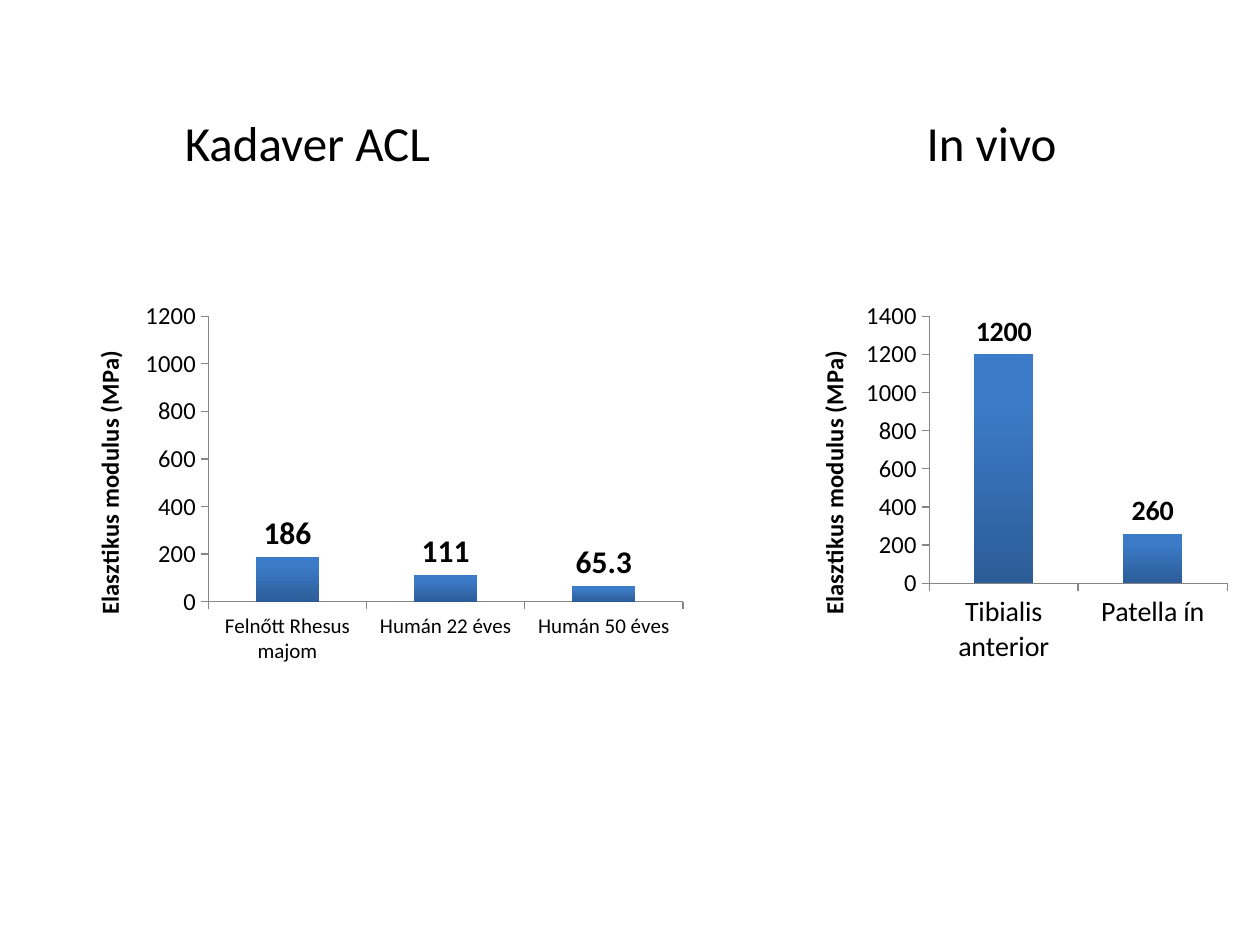
from pptx import Presentation
from pptx.chart.data import CategoryChartData
from pptx.dml.color import RGBColor
from pptx.enum.chart import XL_CHART_TYPE, XL_LABEL_POSITION, XL_TICK_MARK
from pptx.enum.text import MSO_AUTO_SIZE, PP_ALIGN
from pptx.util import Inches, Pt

COLUMN = XL_CHART_TYPE.COLUMN_CLUSTERED
OUT_END = XL_LABEL_POSITION.OUTSIDE_END
OUT, NONE = XL_TICK_MARK.OUTSIDE, XL_TICK_MARK.NONE
CENTER = PP_ALIGN.CENTER
GROW = MSO_AUTO_SIZE.SHAPE_TO_FIT_TEXT

FONT = "Calibri"
COLORS = {"text": "000000", "axis": "868686", "low": "2C5D98", "high": "3C7BC7"}


def color(name):
    return RGBColor.from_string(COLORS[name])


def style(font, size, bold=False):
    font.name = FONT
    font.size = Pt(size)
    font.bold = bold
    font.color.rgb = color("text")


def put_text(frame, text, size, bold=False, align=None):
    para = frame.paragraphs[0]
    para.alignment = align
    run = para.add_run()
    run.text = text
    style(run.font, size, bold)


def add_head(slide, box, text):
    shape = slide.shapes.add_textbox(*map(Inches, box))
    frame = shape.text_frame
    frame.word_wrap = True
    frame.auto_size = GROW
    put_text(frame, text, size=28, align=CENTER)


def style_axis(axis, size):
    axis.has_major_gridlines = False
    axis.major_tick_mark = OUT
    axis.minor_tick_mark = NONE
    axis.format.line.color.rgb = color("axis")
    axis.format.line.width = Pt(0.75)
    style(axis.tick_labels.font, size)


def add_bars(slide, box, values, cat_size, label_size, top=None):
    data = CategoryChartData()
    data.categories = values.keys()
    data.add_series("Series 1", values.values())
    chart = slide.shapes.add_chart(COLUMN, *map(Inches, box), data).chart
    chart.has_title = False
    chart.has_legend = False
    style(chart.font, 10)

    # Axes
    style_axis(chart.category_axis, cat_size)
    axis = chart.value_axis
    style_axis(axis, 14)
    if top:
        axis.maximum_scale = top
    put_text(axis.axis_title.text_frame, "Elasztikus modulus (MPa)", size=14, bold=True)

    # Columns, shaded from bottom to top
    plot = chart.plots[0]
    plot.gap_width = 150
    plot.vary_by_categories = False
    fill = plot.series[0].format.fill
    fill.gradient()
    fill.gradient_angle = 90
    for stop, place, name in zip(fill.gradient_stops, (0, 0.8), ("low", "high")):
        stop.position = place
        stop.color.rgb = color(name)

    # Value labels
    labels = plot.series[0].data_labels
    labels.show_value = True
    labels.position = OUT_END
    style(labels.font, label_size, bold=True)


def main():
    deck = Presentation()
    deck.slide_width, deck.slide_height = Inches(10), Inches(7.5)
    slide = deck.slides.add_slide(deck.slide_layouts[6])

    # Cadaver ligaments
    cadaver = {"Felnőtt Rhesus majom": 186, "Humán 22 éves": 111, "Humán 50 éves": 65.3}
    add_bars(slide, (0.52, 2.33, 5, 3), cadaver, cat_size=12, label_size=18, top=1200)
    add_head(slide, (0.51, 0.84, 3.86, 0.57), "Kadaver ACL")

    # Living tendons
    add_head(slide, (5.94, 0.84, 3.86, 0.57), "In vivo")
    living = {"Tibialis anterior": 1200, "Patella ín": 260}
    add_bars(slide, (6.27, 2.33, 3.54, 3), living, cat_size=16, label_size=16)

    deck.save("out.pptx")


if __name__ == "__main__":
    main()
